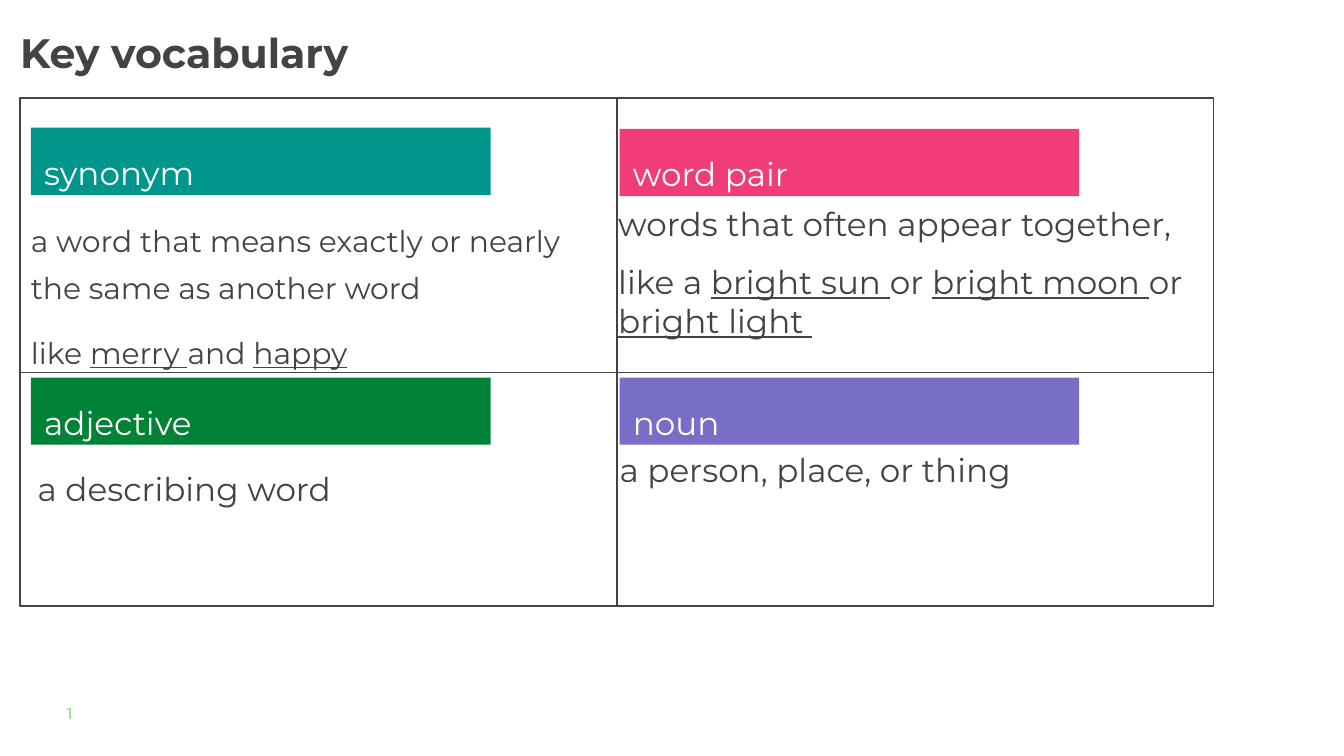
from pptx import Presentation
from pptx.dml.color import RGBColor
from pptx.enum.shapes import MSO_CONNECTOR, MSO_SHAPE
from pptx.enum.text import MSO_ANCHOR, MSO_AUTO_SIZE, PP_ALIGN
from pptx.oxml.ns import qn
from pptx.util import Inches, Pt

RECT, LINE = MSO_SHAPE.RECTANGLE, MSO_CONNECTOR.STRAIGHT
TOP, LEFT, NO_FIT = MSO_ANCHOR.TOP, PP_ALIGN.LEFT, MSO_AUTO_SIZE.NONE
INK = RGBColor(0x43, 0x43, 0x43)
WHITE = RGBColor(0xFF, 0xFF, 0xFF)
TEAL = RGBColor(0x00, 0x96, 0x8C)
PINK = RGBColor(0xF0, 0x3C, 0x78)
GREEN = RGBColor(0x00, 0x82, 0x37)
VIOLET = RGBColor(0x78, 0x6E, 0xC8)
LIME = RGBColor(0x65, 0xBE, 0x4B)

# Grid of two columns and two rows
X0, X1, X2 = 0.15, 4.59, 9.03
Y0, Y1, Y2 = 0.73, 2.77, 4.51


def place(sp, *box):
    sp.left, sp.top, sp.width, sp.height = map(Inches, box)


def write(sp, paragraphs, size, color, spacing=1.0, after=0, inset=0, bold=False):
    """Fill a shape with paragraphs; text between underscores is underlined."""
    tf = sp.text_frame
    frame = dict(word_wrap=True, auto_size=NO_FIT, vertical_anchor=TOP)
    for side in ("left", "top", "right", "bottom"):
        frame["margin_" + side] = Inches(inset)
    for name, value in frame.items():
        setattr(tf, name, value)
    for i, text in enumerate(paragraphs):
        p = tf.add_paragraph() if i else tf.paragraphs[0]
        pPr = p._p.get_or_add_pPr()
        pPr.set("marL", "0")
        pPr.set("indent", "0")
        pPr.append(pPr.makeelement(qn("a:buNone"), {}))
        last = i == len(paragraphs) - 1
        layout = dict(alignment=LEFT, line_spacing=spacing,
                      space_before=Pt(10 if i else 0),
                      space_after=Pt(after if last else 0))
        for name, value in layout.items():
            setattr(p, name, value)
        for j, part in enumerate(text.split("_")):
            if part:
                r = p.add_run()
                r.text = part
                look = dict(name="Montserrat", size=Pt(size), bold=bold, underline=j % 2 == 1)
                for name, value in look.items():
                    setattr(r.font, name, value)
                r.font.color.rgb = color


prs = Presentation()
prs.slide_width = Inches(10)
prs.slide_height = prs.slide_width * 9 // 16
s = prs.slides.add_slide(prs.slide_layouts.get_by_name("Comparison"))

place(s.shapes.title, X0, 0.15, 7.22, 0.89)
write(s.shapes.title, ["Key vocabulary"], 22, INK, spacing=1.15, bold=True)

# term, colour, label left and top, definition left and top, size, spacing, definition
CARDS = [
    ("synonym", TEAL, X0 + 0.08, Y0 + 0.22, X0 + 0.08, Y0 + 0.85, 16, 1.3,
     ["a word that means exactly or nearly the same as another word",
      "like _merry _and _happy_"]),
    ("word pair", PINK, X1 + 0.02, Y0 + 0.23, X1 + 0.01, Y0 + 0.79, 17.5, 1.0,
     ["words that often appear together,",
      "like a _bright sun _or _bright moon _or _bright light _"]),
    ("adjective", GREEN, X0 + 0.08, Y1 + 0.04, X0 + 0.13, Y1 + 0.63, 17.5, 1.3,
     ["a describing word"]),
    ("noun", VIOLET, X1 + 0.02, Y1 + 0.04, X1 + 0.02, Y1 + 0.49, 17.5, 1.3,
     ["a person, place, or thing"]),
]
bodies = list(s.placeholders)[1:]
for body, (term, color, lx, ly, dx, dy, size, spacing, definition) in zip(bodies, CARDS):
    label = s.shapes.add_shape(RECT, Inches(lx), Inches(ly), Inches(3.42), Inches(0.5))
    label.shadow.inherit = False
    label.fill.solid()
    label.fill.fore_color.rgb = color
    label.line.fill.background()
    write(label, [term], 17.5, WHITE, spacing=1.3, inset=0.1)
    place(body, dx, dy, 4.32, 0.69)
    write(body, definition, size, INK, spacing=spacing, after=10)

number = s.shapes.add_textbox(Inches(0.5), Inches(5.24), Inches(0.79), Inches(0.2))
write(number, ["1"], 8, LIME)

border = s.shapes.add_shape(RECT, Inches(X0), Inches(Y0), Inches(X2 - X0), Inches(Y2 - Y0))
border.shadow.inherit = False
border.fill.background()
dividers = [s.shapes.add_connector(LINE, *map(Inches, ends))
            for ends in ((X0, Y1, X2, Y1), (X1, Y0, X1, Y2))]
for sp in [border, *dividers]:
    sp.line.color.rgb = INK
    sp.line.width = Pt(0.75)
for divider in dividers:
    spPr = divider._element.spPr
    spPr.append(spPr.makeelement(qn("a:effectLst"), {}))

prs.save("out.pptx")
